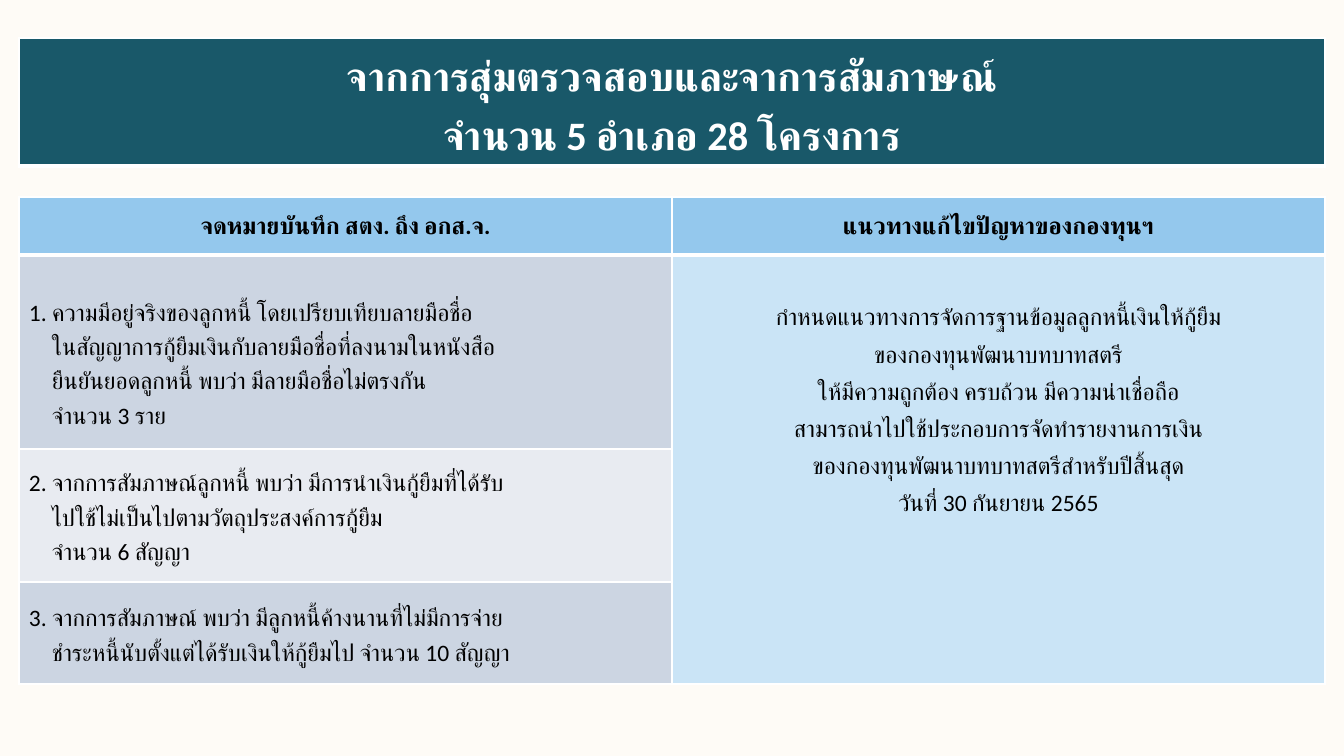
"""Build the audit findings slide: a title band above a two-column table."""
from pptx import Presentation
from pptx.dml.color import RGBColor
from pptx.enum.text import MSO_ANCHOR as Anchor, PP_ALIGN as Align
from pptx.oxml.ns import qn
from pptx.util import Pt
from lxml.etree import SubElement

TITLE = ["จากการสุ่มตรวจสอบและจาการสัมภาษณ์", "จำนวน 5 อำเภอ 28 โครงการ"]
HEADERS = ["จดหมายบันทึก สตง. ถึง อกส.จ.", "แนวทางแก้ไขปัญหาของกองทุนฯ"]
FINDINGS = [
    "1. ความมีอยู่จริงของลูกหนี้ โดยเปรียบเทียบลายมือชื่อ\v"
    "ในสัญญาการกู้ยืมเงินกับลายมือชื่อที่ลงนามในหนังสือ\v"
    "ยืนยันยอดลูกหนี้ พบว่า มีลายมือชื่อไม่ตรงกัน\vจำนวน 3 ราย",
    "2. จากการสัมภาษณ์ลูกหนี้ พบว่า มีการนำเงินกู้ยืมที่ได้รับ\v"
    "ไปใช้ไม่เป็นไปตามวัตถุประสงค์การกู้ยืม\vจำนวน 6 สัญญา",
    "3. จากการสัมภาษณ์ พบว่า มีลูกหนี้ค้างนานที่ไม่มีการจ่าย\v"
    "ชำระหนี้นับตั้งแต่ได้รับเงินให้กู้ยืมไป จำนวน 10 สัญญา",
]
REMEDY = [
    "กำหนดแนวทางการจัดการฐานข้อมูลลูกหนี้เงินให้กู้ยืม\vของกองทุนพัฒนาบทบาทสตรี",
    "ให้มีความถูกต้อง ครบถ้วน มีความน่าเชื่อถือ",
    "สามารถนำไปใช้ประกอบการจัดทำรายงานการเงิน",
    "ของกองทุนพัฒนาบทบาทสตรีสำหรับปีสิ้นสุด",
    "วันที่ 30 กันยายน 2565",
]
COLORS = {
    "page": "FEFBF6", "title": "195869", "header": "94C8ED", "odd": "CCD5E2",
    "even": "E8EBF1", "remedy": "CAE4F6", "white": "FFFFFF", "black": "000000",
}
FONT = "Calibri"
PX = 7557
LEFT, WIDTH = 19, 1306
TITLE_TOP, TITLE_HEIGHT = 38, 115
TABLE_TOP, ROW_HEIGHTS = 197, [58, 194, 133, 102]
PAD_X, PAD_Y, HANG = 10, 5, 23
FINDING_TOP, REMEDY_TOP = 38, 40


def px(length):
    return int(length * PX)


def color(name):
    return RGBColor.from_string(COLORS[name])


def add_grid(page, top, heights, columns):
    frame = page.shapes.add_table(len(heights), columns, px(LEFT), px(top),
                                  px(WIDTH), px(sum(heights)))
    table = frame.table
    for row, height in zip(table.rows, heights):
        row.height = px(height)
    return table


def set_borders(cell, bottom):
    properties = cell._tc.get_or_add_tcPr()
    for index, (side, width) in enumerate(
            [("lnL", 1), ("lnR", 1), ("lnT", 1), ("lnB", bottom)]):
        line = SubElement(properties, qn(f"a:{side}"), w=str(Pt(width)))
        fill = SubElement(line, qn("a:solidFill"))
        SubElement(fill, qn("a:srgbClr"), val=COLORS["white"])
        properties.remove(line)
        properties.insert(index, line)


def fill_cell(cell, lines, fill, size=14, ink="black", bold=False, align=Align.CENTER,
              anchor=Anchor.MIDDLE, spacing=1.0, top=PAD_Y, hang=0, bottom=1):
    cell.fill.solid()
    cell.fill.fore_color.rgb = color(fill)
    set_borders(cell, bottom)
    cell.vertical_anchor = anchor
    cell.margin_left = cell.margin_right = px(PAD_X)
    cell.margin_top, cell.margin_bottom = px(top), px(PAD_Y)
    cell.text_frame.text = "\n".join(lines)
    for para in cell.text_frame.paragraphs:
        para.alignment = align
        para.line_spacing = spacing
        if hang:
            indents = para._p.get_or_add_pPr()
            indents.set("marL", str(px(hang)))
            indents.set("indent", str(-px(hang)))
        for span in para.runs:
            span.font.name = FONT
            span.font.size = Pt(size)
            span.font.bold = bold
            span.font.color.rgb = color(ink)
            SubElement(span.font._element, qn("a:cs"), typeface=FONT)


def main():
    deck = Presentation()
    deck.slide_width, deck.slide_height = px(1344), px(756)
    page = deck.slides.add_slide(deck.slide_layouts[6])
    page.background.fill.solid()
    page.background.fill.fore_color.rgb = color("page")

    table = add_grid(page, TABLE_TOP, ROW_HEIGHTS, len(HEADERS))
    for column, header in enumerate(HEADERS):
        fill_cell(table.cell(0, column), [header], "header", bold=True, bottom=3)
    for row, finding in enumerate(FINDINGS, 1):
        first = row == 1
        fill_cell(table.cell(row, 0), [finding], "odd" if row % 2 else "even",
                  align=Align.LEFT, anchor=Anchor.TOP if first else Anchor.MIDDLE,
                  spacing=1.2, top=FINDING_TOP if first else PAD_Y, hang=HANG)
    remedy = table.cell(1, 1)
    remedy.merge(table.cell(len(FINDINGS), 1))
    fill_cell(remedy, REMEDY, "remedy", anchor=Anchor.TOP, spacing=1.3, top=REMEDY_TOP)

    band = add_grid(page, TITLE_TOP, [TITLE_HEIGHT], 1)
    fill_cell(band.cell(0, 0), TITLE, "title", size=24, ink="white", bold=True,
              anchor=Anchor.TOP, spacing=1.2, bottom=3)
    deck.save("out.pptx")


if __name__ == "__main__":
    main()
